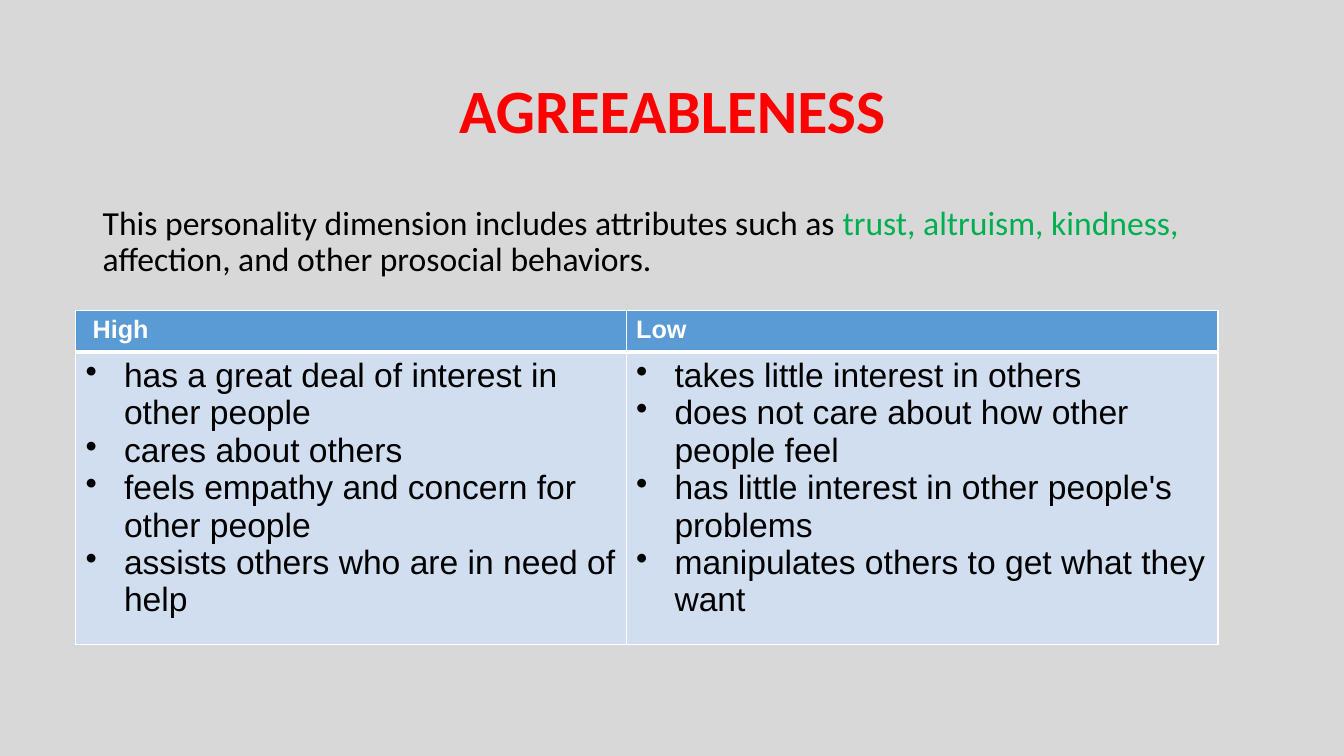
import pptx
import pptx.dml.color
import pptx.enum.text
import pptx.oxml
import pptx.oxml.ns
import pptx.util
from lxml import etree

Inches = pptx.util.Inches
Pt = pptx.util.Pt
qn = pptx.oxml.ns.qn
ALIGN = pptx.enum.text.PP_ALIGN
ANCHOR = pptx.enum.text.MSO_ANCHOR

COLORS = {
    "back": "D8D8D8",
    "title": "FF0000",
    "text": "000000",
    "accent": "00B050",
    "head": "5B9BD5",
    "body": "D0DEEF",
    "white": "FFFFFF",
}

INTRO = [
    ("This personality dimension includes attributes such as", "text"),
    (" trust, altruism, kindness, ", "accent"),
    ("affection, and other prosocial behaviors.", "text"),
]

TRAITS = {
    " High": [
        "has a great deal of interest in other people",
        "cares about others",
        "feels empathy and concern for other people",
        "assists others who are in need of help",
    ],
    "Low": [
        "takes little interest in others",
        "does not care about how other people feel",
        "has little interest in other people's problems",
        "manipulates others to get what they want",
    ],
}


def color(name):
    return pptx.dml.color.RGBColor.from_string(COLORS[name])


def style(para, face, size, tint=None, bold=False):
    font = para.font
    font.name, font.size, font.bold = face, Pt(size), bold
    if tint:
        font.color.rgb = color(tint)


def add_text(slide, box, runs, size, bold=False, align=ALIGN.LEFT, anchor=ANCHOR.TOP):
    """Add a Calibri text box with one paragraph of (words, colour) runs."""
    frame = slide.shapes.add_textbox(*map(Inches, box)).text_frame
    frame.word_wrap = True
    frame.vertical_anchor = anchor
    para = frame.paragraphs[0]
    para.alignment, para.line_spacing = align, 0.9
    style(para, "Calibri", size, bold=bold)
    for words, tint in runs:
        run = para.add_run()
        run.text = words
        run.font.color.rgb = color(tint)


def add_bullet(para):
    props = para._p.get_or_add_pPr()
    props.set("marL", str(Inches(0.38)))
    props.set("indent", str(Inches(-0.38)))
    mark = pptx.oxml.parse_xml(
        f'<a:buChar {pptx.oxml.ns.nsdecls("a")} char="•"/>')
    props.insert_element_before(mark, "a:tabLst", "a:defRPr", "a:extLst")


def set_edges(cell, top, bottom):
    """Draw white cell borders, one point wide at the sides."""
    props = cell._tc.get_or_add_tcPr()
    widths = {"lnL": 1, "lnR": 1, "lnT": top, "lnB": bottom}
    for spot, (tag, width) in enumerate(widths.items()):
        line = etree.Element(qn("a:" + tag), w=str(Pt(width)))
        fill = etree.SubElement(line, qn("a:solidFill"))
        etree.SubElement(fill, qn("a:srgbClr"), val=COLORS["white"])
        props.insert(spot, line)


def fill_cell(cell, lines, fill, size, tint, bold=False, bullet=False):
    cell.fill.solid()
    cell.fill.fore_color.rgb = color(fill)
    frame = cell.text_frame
    frame.text = "\n".join(lines)
    for para in frame.paragraphs:
        style(para, "Arial", size, tint, bold)
        if bullet:
            add_bullet(para)


def add_traits(slide):
    widths, heights = (5.46, 5.87), (0.41, 2.7)
    box = (0.75, 3.08, sum(widths), sum(heights))
    table = slide.shapes.add_table(2, 2, *map(Inches, box)).table
    for row, height in zip(table.rows, heights):
        row.height = Inches(height)
    for col, (head, items) in enumerate(TRAITS.items()):
        table.columns[col].width = Inches(widths[col])
        top, low = table.cell(0, col), table.cell(1, col)
        fill_cell(top, [head], "head", 18, "white", bold=True)
        fill_cell(low, items, "body", 24, "text", bullet=True)
        set_edges(top, 1, 3)
        set_edges(low, 3, 1)


def main():
    deck = pptx.Presentation()
    deck.slide_width, deck.slide_height = Inches(13.33), Inches(7.5)
    slide = deck.slides.add_slide(deck.slide_layouts[6])
    slide.background.fill.solid()
    slide.background.fill.fore_color.rgb = color("back")
    add_text(slide, (0.92, 0.4, 11.5, 1.45), [("AGREEABLENESS", "title")], 44,
             bold=True, align=ALIGN.CENTER, anchor=ANCHOR.MIDDLE)
    add_text(slide, (0.92, 2, 11.5, 4.76), INTRO, 24)
    add_traits(slide)
    deck.save("out.pptx")


if __name__ == "__main__":
    main()
